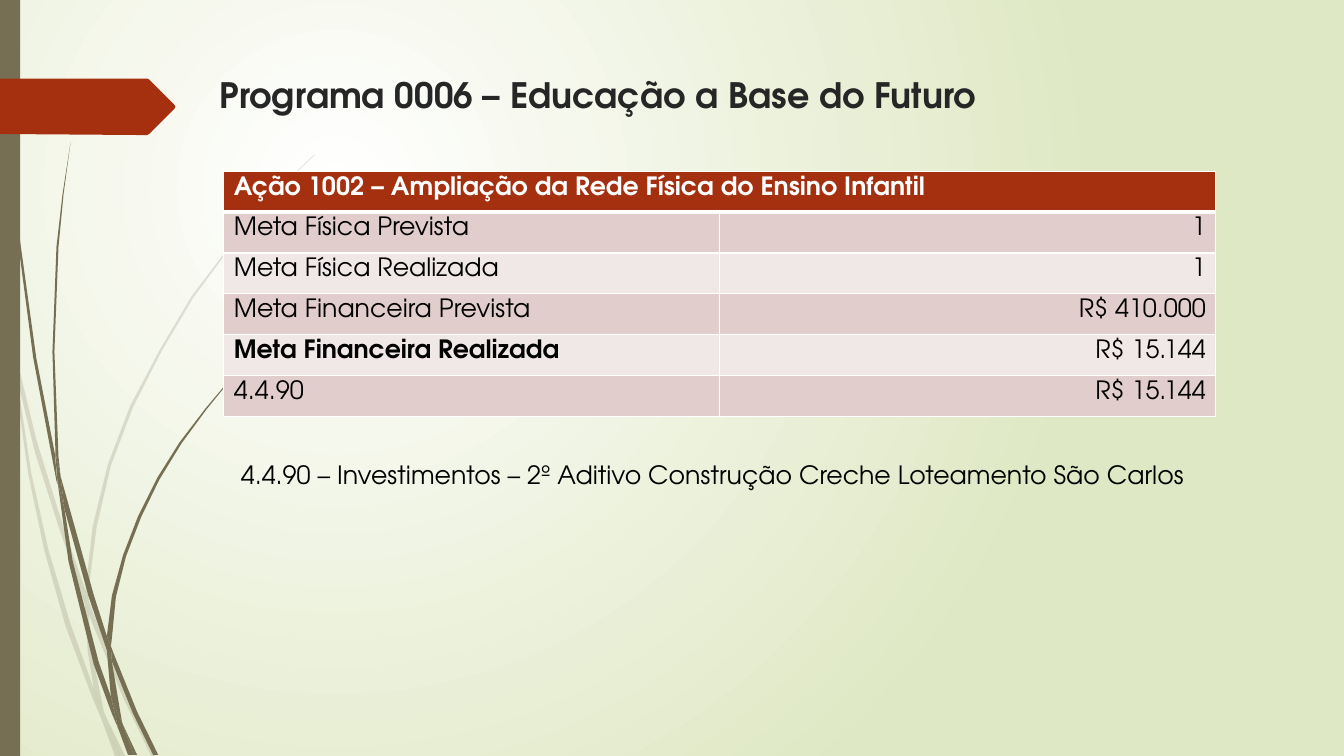
from lxml.etree import SubElement
from pptx import Presentation
from pptx.dml.color import RGBColor
from pptx.enum.shapes import MSO_SHAPE as Preset
from pptx.enum.text import MSO_ANCHOR as Anchor, PP_ALIGN as Align
from pptx.oxml.ns import qn
from pptx.util import Inches, Pt

FONT = "TeX Gyre Adventor"
COLORS = {
    "white": "FFFFFF", "sage": "DFE8C4", "olive": "766F54", "rust": "A53010",
    "title": "262626", "black": "000000", "band_dark": "E1CDCC", "band_light": "F0E8E7",
}
TITLE = "Programa 0006 – Educação a Base do Futuro"
HEADER = "Ação 1002 – Ampliação da Rede Física do Ensino Infantil"
ROWS = [
    ("Meta Física Prevista", "1", False),
    ("Meta Física Realizada", "1", False),
    ("Meta Financeira Prevista", "R$ 410.000", False),
    ("Meta Financeira Realizada", "R$ 15.144", True),
    ("4.4.90", "R$ 15.144", False),
]
NOTE = "4.4.90 – Investimentos – 2º Aditivo Construção Creche Loteamento São Carlos"

PALE_BLADES = [
    [(0.11, 3.5), (0.09, 3.22), (0, 2.82), (0, 2.99), (0.1, 3.44)],
    [(0.58, 5.22), (0.84, 5.99), (0.85, 5.86), (0.62, 5.2), (0.36, 4.36), (0.14, 3.45),
     (0.17, 3.76), (0.35, 4.5)],
    [(0.92, 6.07), (0.88, 5.96), (0.88, 6.1), (1.23, 6.94), (1.5, 7.5), (1.55, 7.5),
     (1.27, 6.92)],
    [(1.19, 7.5), (1.24, 7.5), (1.05, 7.11)],
    [(0.93, 6.83), (0.7, 6.19), (0.48, 5.45), (0.31, 4.69), (0.17, 3.76), (0.11, 3.5),
     (0.28, 4.7), (0.44, 5.46), (0.65, 6.21), (0.92, 6.93), (1.01, 7.14), (0.99, 7.07)],
    [(0.84, 5.99), (0.87, 6.46), (0.93, 6.83), (0.96, 6.92), (1.05, 7.11), (1.03, 7.06),
     (0.91, 6.46), (0.88, 6.1), (0.88, 6.08)],
    [(0.88, 5.84), (0.96, 5.22), (1.1, 4.62), (1.32, 4.04), (1.6, 3.49), (1.92, 2.95),
     (2.29, 2.45), (2.68, 1.98), (2.9, 1.75), (3.12, 1.54), (3.12, 1.53), (2.89, 1.75),
     (2.68, 1.97), (2.28, 2.44), (1.9, 2.94), (1.58, 3.48), (1.29, 4.03), (1.07, 4.61),
     (0.92, 5.22), (0.85, 5.84), (0.85, 5.86), (0.88, 5.96)],
    [(1.01, 7.14), (1.14, 7.5), (1.19, 7.5)],
    [(0.88, 6.08), (0.88, 6.1), (0.88, 5.96), (0.85, 5.86), (0.84, 5.99)],
    [(0.96, 6.92), (0.93, 6.83), (0.99, 7.07), (1.01, 7.14), (1.19, 7.5), (1.05, 7.11)],
]
DARK_BLADES = [
    [(0.07, 1.1), (0.17, 2.33), (0.33, 3.55), (0.56, 4.77), (0.57, 4.81), (0.55, 4.57),
     (0.55, 4.53), (0.36, 3.55), (0.19, 2.32), (0.08, 1.09), (0.05, 0.48), (0.04, 0),
     (0.03, 0), (0.04, 0.48)],
    [(0.88, 5.92), (1.06, 6.45), (1.06, 6.33), (1.06, 6.31), (0.93, 5.9), (0.6, 4.72),
     (0.64, 5.05)],
    [(1.13, 6.49), (1.1, 6.41), (1.11, 6.56), (1.32, 7.08), (1.52, 7.49), (1.57, 7.49),
     (1.36, 7.06)],
    [(1.1, 6.91), (0.98, 6.57), (0.72, 5.56), (0.64, 5.05), (0.57, 4.77), (0.68, 5.57),
     (0.93, 6.59), (1.11, 7.08), (1.17, 7.22), (1.16, 7.17)],
    [(0.6, 4.72), (0.58, 4.53), (0.54, 3.49), (0.58, 2.45), (0.63, 1.93), (0.7, 1.41),
     (0.62, 1.93), (0.56, 2.45), (0.52, 3.49), (0.55, 4.49)],
    [(1.33, 7.49), (1.36, 7.49), (1.22, 7.19)],
    [(0.57, 4.77), (0.64, 5.05), (0.6, 4.72), (0.55, 4.49), (0.55, 4.53)],
    [(1.11, 6.33), (1.15, 5.92), (1.25, 5.52), (1.4, 5.13), (1.58, 4.76), (1.8, 4.4),
     (2.05, 4.06), (2.31, 3.74), (2.45, 3.59), (2.61, 3.44), (2.6, 3.44), (2.45, 3.58),
     (2.31, 3.73), (2.04, 4.05), (1.78, 4.39), (1.56, 4.74), (1.37, 5.12), (1.22, 5.51),
     (1.11, 5.91), (1.06, 6.31), (1.1, 6.41)],
    [(1.17, 7.22), (1.27, 7.49), (1.31, 7.49)],
    [(1.06, 6.45), (1.1, 6.91), (1.16, 7.06), (1.22, 7.19), (1.21, 7.16), (1.11, 6.56),
     (1.09, 6.51)],
    [(1.06, 6.45), (1.09, 6.51), (1.11, 6.56), (1.1, 6.41), (1.06, 6.31), (1.06, 6.33)],
    [(1.16, 7.06), (1.1, 6.91), (1.16, 7.17), (1.17, 7.22), (1.3, 7.49), (1.33, 7.49),
     (1.22, 7.19)],
]
ARROW = [(1.73, 1.08), (1.48, 1.33), (1.46, 1.34), (1.36, 1.34), (0, 1.33), (0, 0.78),
         (1.46, 0.78), (1.48, 0.79), (1.73, 1.04), (1.74, 1.06)]
UNITS = 100


def rgb(name):
    return RGBColor.from_string(COLORS[name])


def paint(shape, color, opacity=100):
    shape.shadow.inherit = False
    shape.fill.solid()
    shape.fill.fore_color.rgb = rgb(color)
    shape.line.fill.background()
    if opacity < 100:
        tint = shape.fill._xPr.find(".//" + qn("a:srgbClr"))
        SubElement(tint, qn("a:alpha"), val=str(opacity * 1000))


def add_outline(slide, points, color, opacity=100):
    scaled = [(round(x * UNITS), round(y * UNITS)) for x, y in points]
    builder = slide.shapes.build_freeform(*scaled[0], scale=Inches(1) / UNITS)
    builder.add_line_segments(scaled[1:], close=True)
    paint(builder.convert_to_shape(), color, opacity)


def write(frame, text, size, color, bold=False, align=Align.LEFT):
    paragraph = frame.paragraphs[0]
    paragraph.alignment = align
    run = paragraph.add_run()
    run.text = text
    run.font.name = FONT
    run.font.size = Pt(size)
    run.font.bold = bold
    run.font.color.rgb = rgb(color)


def add_text(slide, box, text, size, color, bold=False):
    frame = slide.shapes.add_textbox(*map(Inches, box)).text_frame
    frame.word_wrap = True
    frame.vertical_anchor = Anchor.TOP
    write(frame, text, size, color, bold)


def style_cell(cell, color, top, bottom):
    properties = cell._tc.get_or_add_tcPr()
    for side, width in (("L", 1), ("R", 1), ("T", top), ("B", bottom)):
        line = SubElement(properties, qn("a:ln" + side), w=str(Pt(width)))
        fill = SubElement(line, qn("a:solidFill"))
        SubElement(fill, qn("a:srgbClr"), val=COLORS["white"])
    cell.fill.solid()
    cell.fill.fore_color.rgb = rgb(color)
    cell.vertical_anchor = Anchor.TOP


def add_goals_table(slide):
    box = map(Inches, (2.22, 1.7, 9.84, 2.43))
    table = slide.shapes.add_table(len(ROWS) + 1, 2, *box).table
    for cell in table.rows[0].cells:
        style_cell(cell, "rust", 1, 3)
    table.cell(0, 0).merge(table.cell(0, 1))
    write(table.cell(0, 0).text_frame, HEADER, 18, "white", True)
    for index, (label, value, bold) in enumerate(ROWS, 1):
        band = "band_dark" if index % 2 else "band_light"
        for cell in table.rows[index].cells:
            style_cell(cell, band, 3 if index == 1 else 1, 1)
        write(table.cell(index, 0).text_frame, label, 18, "black", bold)
        write(table.cell(index, 1).text_frame, value, 18, "black", align=Align.RIGHT)


def set_background(slide):
    fill = slide.background.fill
    fill.gradient()
    for stop, color in zip(fill.gradient_stops, ("white", "sage")):
        stop.color.rgb = rgb(color)
    gradient = slide.element.find(".//" + qn("a:gradFill"))
    gradient.remove(gradient.find(qn("a:lin")))
    circle = SubElement(gradient, qn("a:path"), path="circle")
    SubElement(circle, qn("a:fillToRect"), l="50000", t="50000", r="100000", b="100000")


def main():
    presentation = Presentation()
    presentation.slide_width = Inches(13.33)
    presentation.slide_height = Inches(7.5)
    slide = presentation.slides.add_slide(presentation.slide_layouts[6])
    set_background(slide)
    for blades, opacity in ((PALE_BLADES, 20), (DARK_BLADES, 100)):
        for points in blades:
            add_outline(slide, points, "olive", opacity)
    side_bar = slide.shapes.add_shape(Preset.RECTANGLE, 0, 0, Inches(0.2), Inches(7.5))
    paint(side_bar, "olive")
    add_outline(slide, ARROW, "rust")
    add_text(slide, (2.08, 0.68, 10.5, 0.69), TITLE, 25, "title", True)
    add_goals_table(slide)
    add_text(slide, (2.29, 4.51, 9.79, 0.4), NOTE, 18, "black")
    presentation.save("out.pptx")


if __name__ == "__main__":
    main()
